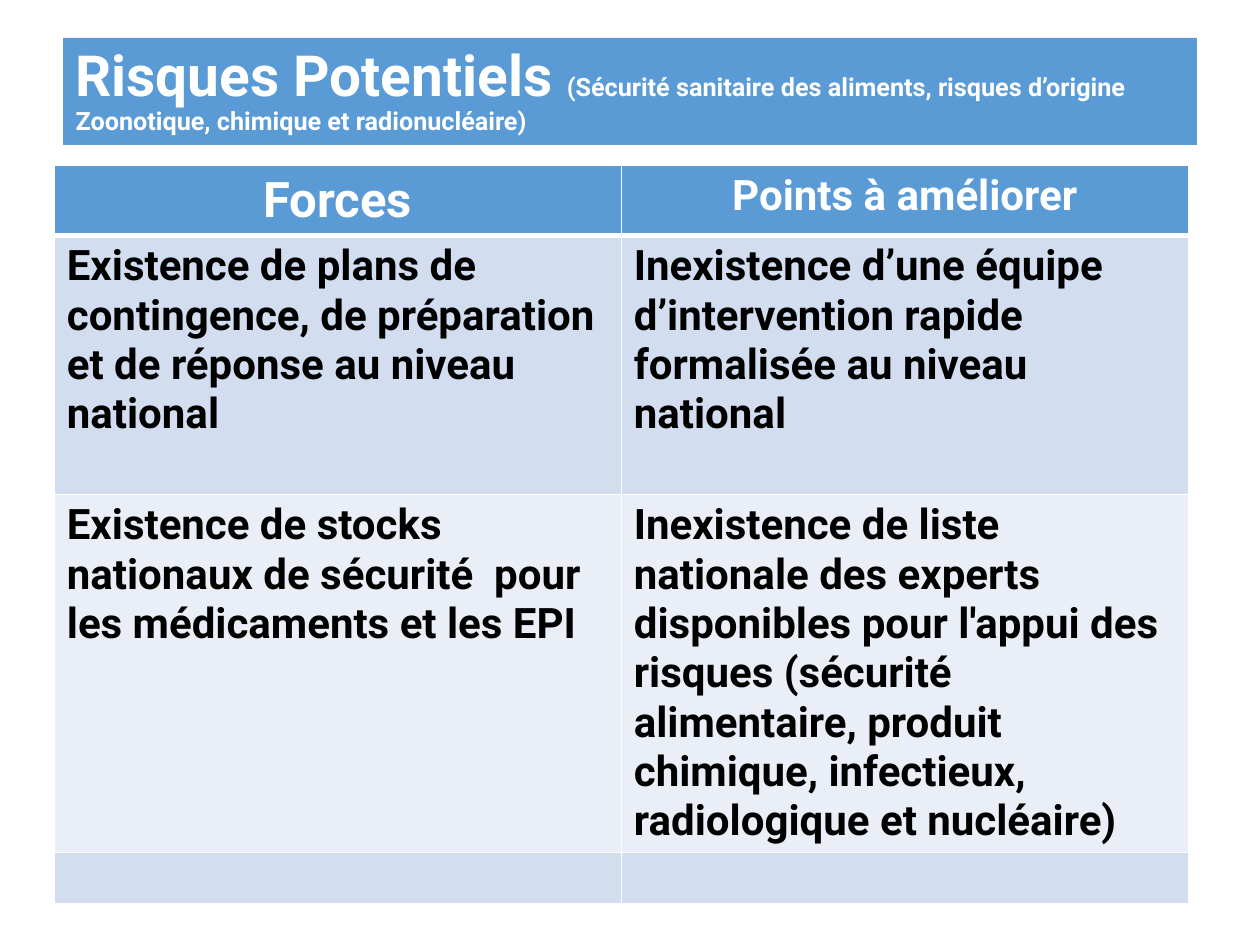
"""Build a slide listing strengths and points to improve for potential risks."""
from lxml import etree
from pptx import Presentation
from pptx.dml.color import RGBColor
from pptx.enum import text
from pptx.oxml import ns
from pptx.util import Pt

WHITE = RGBColor(0xFF, 0xFF, 0xFF)
BLACK = RGBColor(0x00, 0x00, 0x00)
BLUE = RGBColor(0x5B, 0x9B, 0xD5)
BAND_DARK = RGBColor(0xD2, 0xDE, 0xEF)
BAND_LIGHT = RGBColor(0xEA, 0xEF, 0xF7)
FONT = "Roboto"

TITLE = [
    ("Risques Potentiels ", 32.4),
    ("(Sécurité sanitaire des aliments, risques d’origine Zoonotique, "
     "chimique et radionucléaire)", 14.4),
]
HEADERS = [("Forces", 28), ("Points à améliorer", 24)]
ROWS = [
    ("Existence de plans de contingence, de préparation et de réponse "
     "au niveau national",
     "Inexistence d’une équipe d’intervention rapide formalisée "
     "au niveau national"),
    ("Existence de stocks nationaux de sécurité  pour les médicaments "
     "et les EPI",
     "Inexistence de liste nationale des experts disponibles pour l'appui "
     "des risques (sécurité alimentaire, produit chimique, infectieux, "
     "radiologique et nucléaire)"),
    ("", ""),
]
ROW_HEIGHTS = [39, 148, 204.5, 29]
COLUMN_WIDTH = 324


def add_span(para, content, size, color):
    """Add bold text to a paragraph."""
    span = para.add_run()
    span.text = content
    span.font.name = FONT
    span.font.size = Pt(size)
    span.font.bold = True
    span.font.color.rgb = color


def fill_title(box):
    """Place and format the title placeholder."""
    box.left, box.top, box.width, box.height = Pt(36), Pt(21.6), Pt(648), Pt(61.2)
    box.fill.solid()
    box.fill.fore_color.rgb = BLUE
    frame = box.text_frame
    frame.word_wrap = True
    frame.auto_size = text.MSO_AUTO_SIZE.NONE
    frame.vertical_anchor = text.MSO_ANCHOR.MIDDLE
    para = frame.paragraphs[0]
    para.alignment = text.PP_ALIGN.LEFT
    para.line_spacing = 0.9
    para.space_before = Pt(0)
    for content, size in TITLE:
        add_span(para, content, size, WHITE)


def set_borders(cell, top=1, bottom=1):
    """Draw white borders, with widths in points, around a cell."""
    properties = cell._tc.get_or_add_tcPr()
    widths = {"a:lnL": 1, "a:lnR": 1, "a:lnT": top, "a:lnB": bottom}
    for position, (tag, width) in enumerate(widths.items()):
        line = etree.Element(ns.qn(tag), w=str(Pt(width)))
        solid = etree.SubElement(line, ns.qn("a:solidFill"))
        etree.SubElement(solid, ns.qn("a:srgbClr"), val=str(WHITE))
        properties.insert(position, line)


def fill_cell(cell, content, fill, size=24, color=BLACK,
              align=text.PP_ALIGN.LEFT, **borders):
    """Write and format one table cell."""
    cell.fill.solid()
    cell.fill.fore_color.rgb = fill
    set_borders(cell, **borders)
    if content:
        para = cell.text_frame.paragraphs[0]
        para.alignment = align
        add_span(para, content, size, color)


def add_comparison(page):
    """Add the table of strengths and points to improve."""
    table = page.shapes.add_table(
        len(ROWS) + 1, len(HEADERS), Pt(31), Pt(94.5),
        Pt(COLUMN_WIDTH * len(HEADERS)), Pt(sum(ROW_HEIGHTS))).table
    for column in table.columns:
        column.width = Pt(COLUMN_WIDTH)
    for row, height in zip(table.rows, ROW_HEIGHTS):
        row.height = Pt(height)
    for index, (content, size) in enumerate(HEADERS):
        fill_cell(table.cell(0, index), content, BLUE, size=size, color=WHITE,
                  align=text.PP_ALIGN.CENTER, bottom=3)
    for number, contents in enumerate(ROWS, start=1):
        fill = BAND_DARK if number % 2 else BAND_LIGHT
        for index, content in enumerate(contents):
            fill_cell(table.cell(number, index), content, fill,
                      top=3 if number == 1 else 1)


def main():
    """Build and save the deck."""
    deck = Presentation()
    deck.slide_width, deck.slide_height = Pt(720), Pt(540)
    page = deck.slides.add_slide(deck.slide_layouts.get_by_name("Title Only"))
    fill_title(page.shapes.title)
    add_comparison(page)
    deck.save("out.pptx")


if __name__ == "__main__":
    main()
